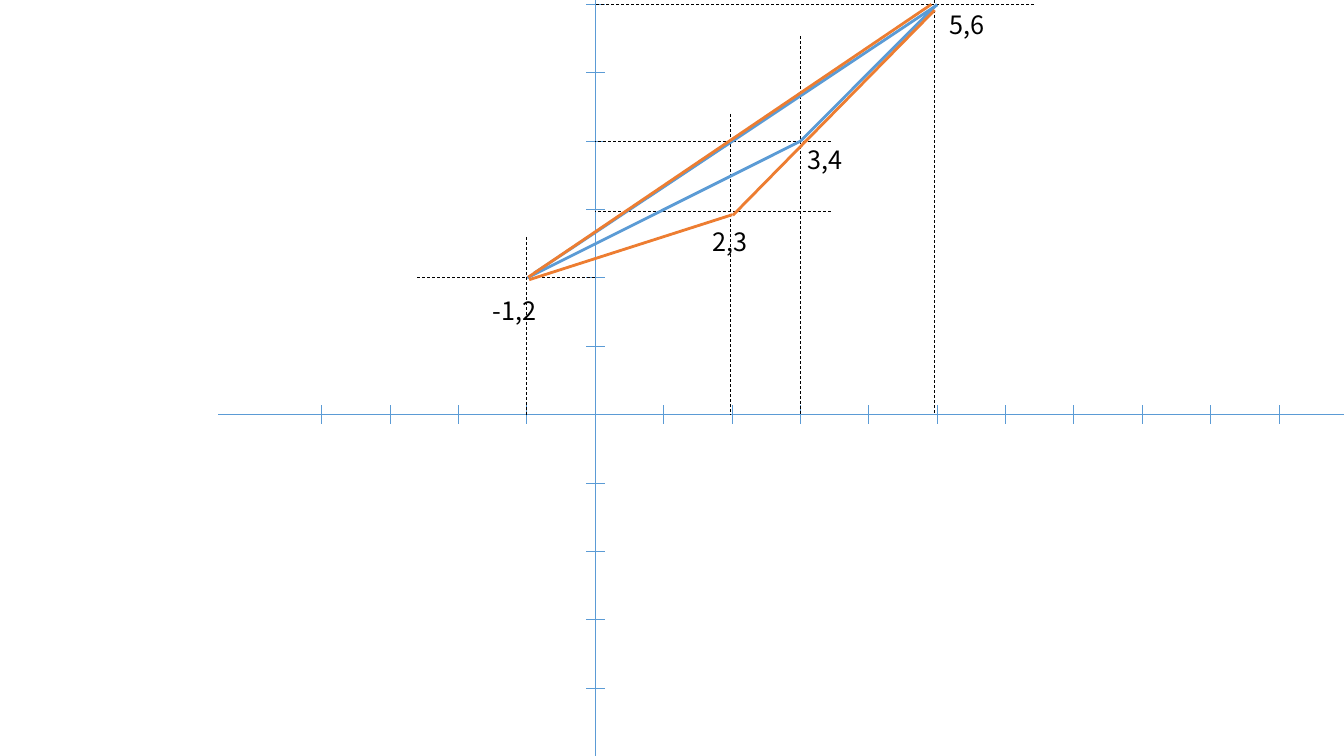
from lxml.etree import SubElement
from pptx import Presentation
from pptx.dml.color import RGBColor
from pptx.enum.dml import MSO_LINE
from pptx.enum.shapes import MSO_CONNECTOR
from pptx.enum.text import MSO_AUTO_SIZE
from pptx.oxml.ns import qn
from pptx.util import Pt

BLUE = RGBColor(0x5B, 0x9B, 0xD5)
ORANGE = RGBColor(0xED, 0x7D, 0x31)
BLACK = RGBColor(0, 0, 0)
FONT = "Noto Sans CJK JP"

WIDTH, HEIGHT = 960, 540
ORIGIN_X, ORIGIN_Y = 425.1, 296.1
UNIT = 48.85
TICK = 6.75
AXIS_LEFT = 156
X_TICKS = range(-4, 11)
Y_TICKS = range(-4, 7)

VERTICAL_GUIDES = [(376.3, 169.2), (571.6, 25.9), (667.6, 0), (521.5, 81.4)]
HORIZONTAL_GUIDES = [(198.4, 298.1), (100.9, 593.3), (3.1, 738.7), (151, 593.3)]
EDGES = [
    (BLUE, (376.6, 198.5), (571.7, 100.9)),
    (BLUE, (571.7, 100.9), (669.3, 3.1)),
    (BLUE, (381.6, 195.1), (669.3, 3.6)),
    (ORANGE, (378, 199.8), (523, 153.4)),
    (ORANGE, (523.5, 153.8), (667.7, 7.2)),
    (ORANGE, (377.3, 198), (665.3, 3.1)),
]
LABELS = [
    ("-1,2", 344.9, 207.4, 51.1),
    ("2,3", 501.8, 158.4, 43.2),
    ("3,4", 569.5, 99.4, 43.2),
    ("5,6", 671, 2.9, 43.2),
]


def add_line(slide, start, end, color, width=0.5, dash=None):
    connector = slide.shapes.add_connector(
        MSO_CONNECTOR.STRAIGHT, *(Pt(value) for value in (*start, *end)))
    connector.line.color.rgb = color
    connector.line.width = Pt(width)
    if dash is not None:
        connector.line.dash_style = dash
    SubElement(connector._element.spPr, qn("a:effectLst"))


def add_axes(slide):
    add_line(slide, (AXIS_LEFT, ORIGIN_Y), (WIDTH, ORIGIN_Y), BLUE)
    add_line(slide, (ORIGIN_X, 0), (ORIGIN_X, HEIGHT), BLUE)
    for step in X_TICKS:
        x = ORIGIN_X + step * UNIT
        add_line(slide, (x, ORIGIN_Y - TICK), (x, ORIGIN_Y + TICK), BLUE)
    for step in Y_TICKS:
        y = ORIGIN_Y - step * UNIT
        add_line(slide, (ORIGIN_X + TICK, y), (ORIGIN_X - TICK, y), BLUE)


def add_guides(slide):
    for x, top in VERTICAL_GUIDES:
        add_line(slide, (x, top), (x, ORIGIN_Y), BLACK, dash=MSO_LINE.DASH)
    for y, far_end in HORIZONTAL_GUIDES:
        add_line(slide, (far_end, y), (ORIGIN_X, y), BLACK, dash=MSO_LINE.DASH)


def add_label(slide, text, left, top, width):
    shape = slide.shapes.add_textbox(Pt(left), Pt(top), Pt(width), Pt(29.1))
    frame = shape.text_frame
    frame.word_wrap = False
    frame.auto_size = MSO_AUTO_SIZE.SHAPE_TO_FIT_TEXT
    paragraph = frame.paragraphs[0]
    paragraph.text = text
    paragraph.font.name = FONT
    paragraph.font.size = Pt(18)
    paragraph.font.color.rgb = BLACK


def main():
    presentation = Presentation()
    presentation.slide_width = Pt(WIDTH)
    presentation.slide_height = Pt(HEIGHT)
    slide = presentation.slides.add_slide(presentation.slide_layouts[6])
    add_axes(slide)
    add_guides(slide)
    for color, start, end in EDGES:
        add_line(slide, start, end, color, width=2)
    for label in LABELS:
        add_label(slide, *label)
    presentation.save("out.pptx")


if __name__ == "__main__":
    main()
